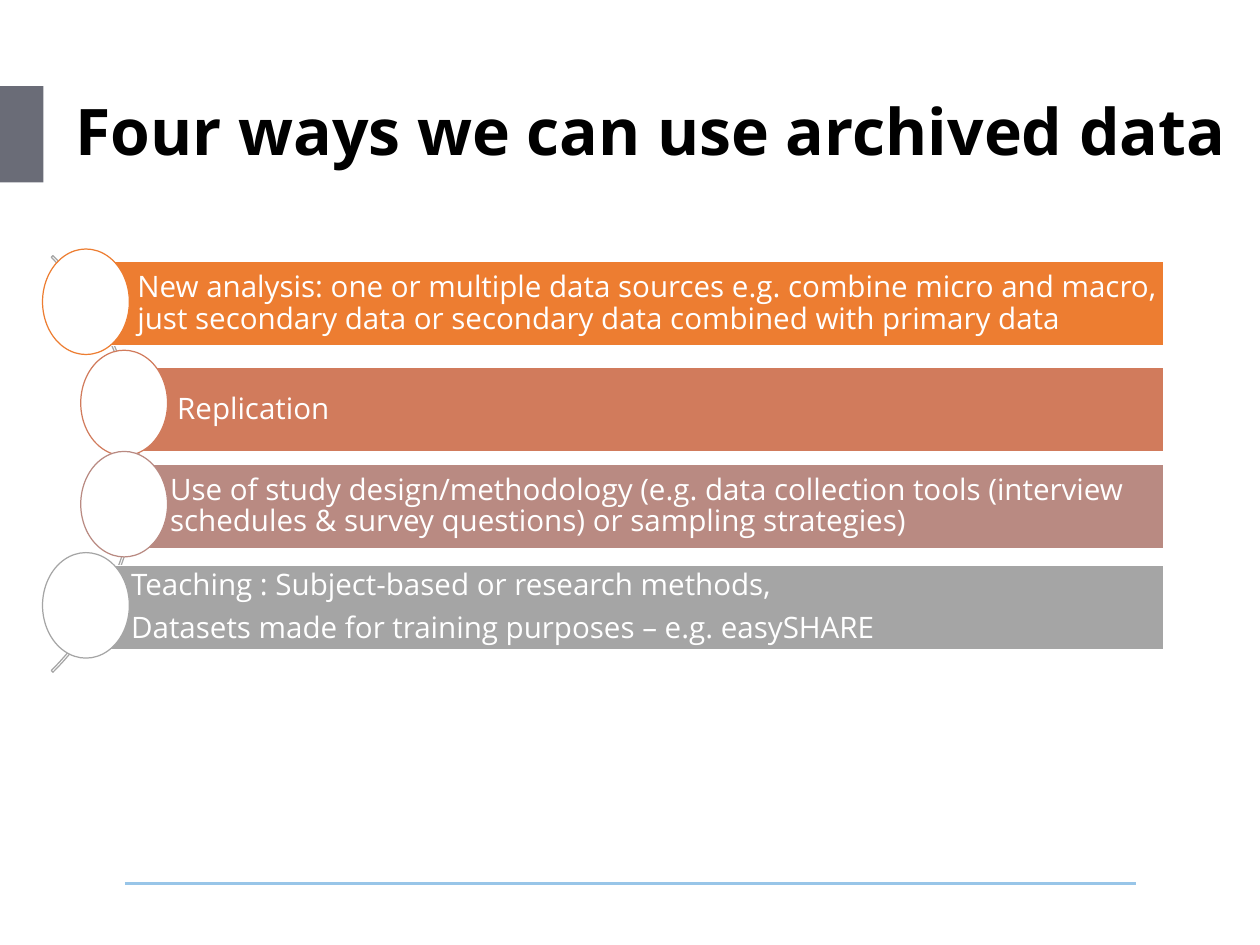
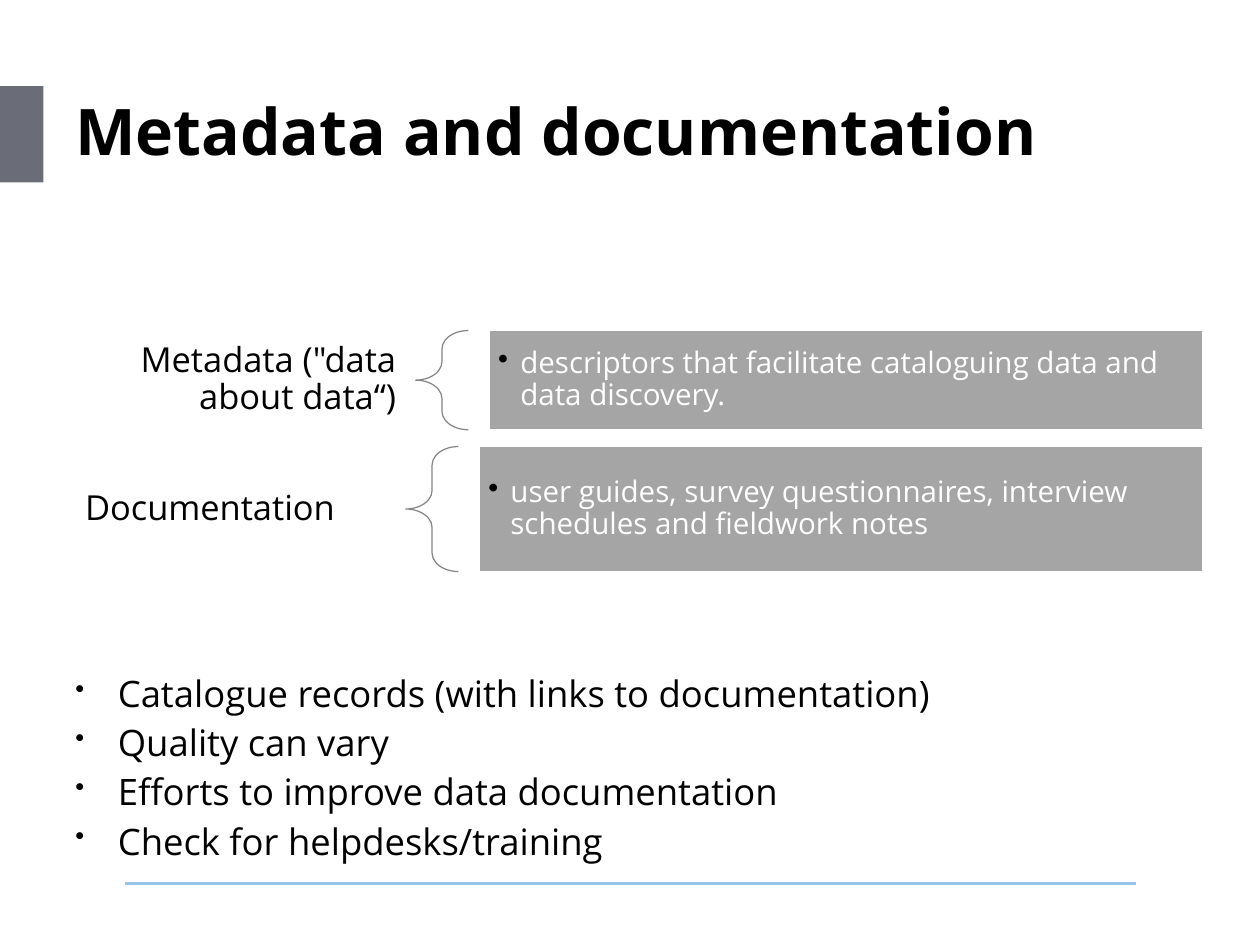
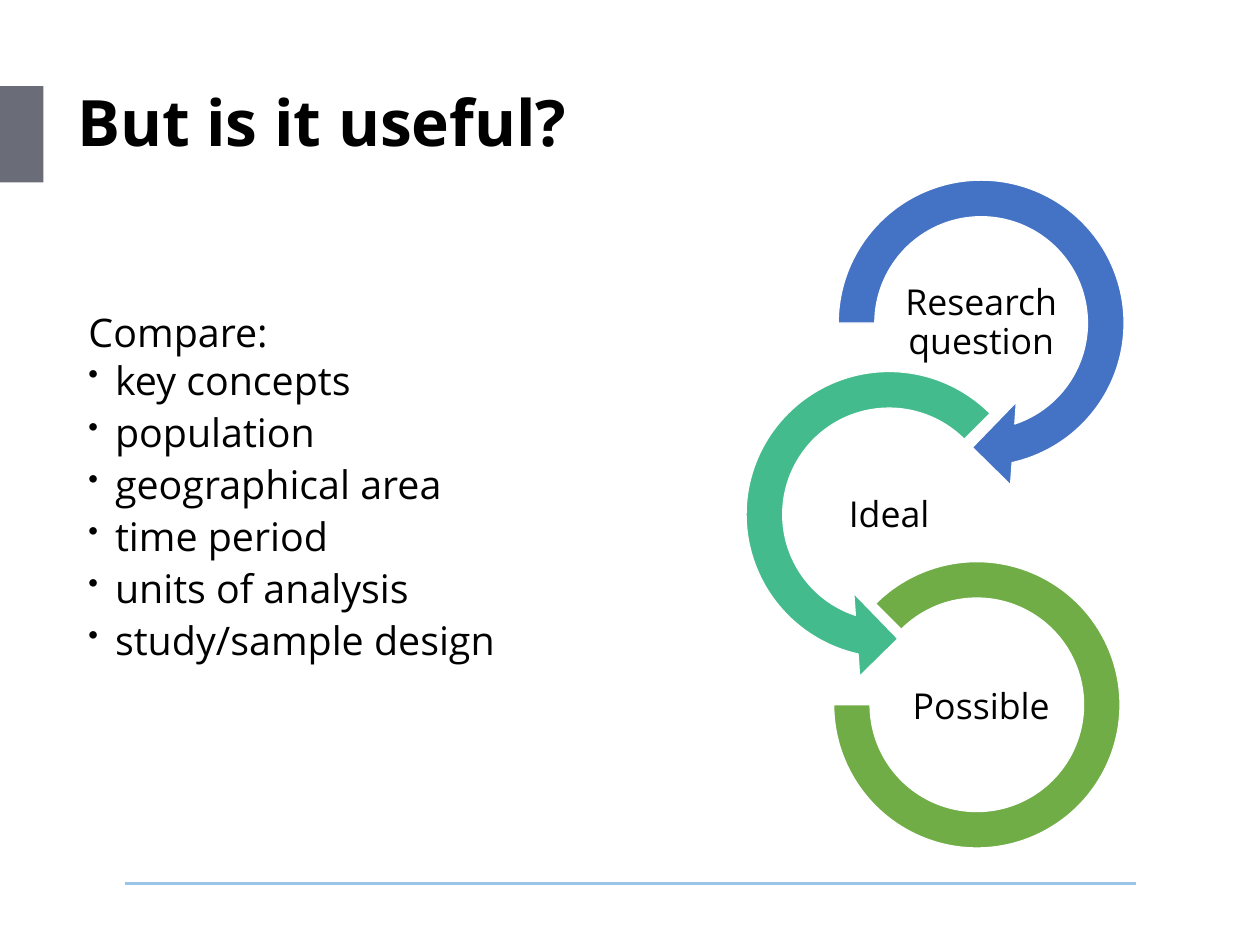
"""Builds three slides about reusing archived data on a 64 by 48 grid."""
from dataclasses import dataclass
from typing import Any, NamedTuple

from lxml import etree
from pptx import Presentation
from pptx.dml.color import RGBColor
from pptx.enum.shapes import MSO_CONNECTOR, MSO_SHAPE
from pptx.enum.text import MSO_ANCHOR, PP_ALIGN
from pptx.oxml.ns import qn
from pptx.util import Emu, Inches, Pt

RECT, OVAL, ARC = MSO_SHAPE.RECTANGLE, MSO_SHAPE.OVAL, MSO_SHAPE.BLOCK_ARC
BRACE, TURN = MSO_SHAPE.LEFT_BRACE, MSO_SHAPE.CIRCULAR_ARROW
BACK = MSO_SHAPE.LEFT_CIRCULAR_ARROW
LINE = MSO_CONNECTOR.STRAIGHT
TOP, MID = MSO_ANCHOR.TOP, MSO_ANCHOR.MIDDLE
LEFT, RIGHT, CENTER = PP_ALIGN.LEFT, PP_ALIGN.RIGHT, PP_ALIGN.CENTER

WIDE, HIGH = Inches(14.22), Inches(10.67)
COLS, ROWS = 64, 48


@dataclass(frozen=True)
class Theme:
    """Colours and type sizes of the deck."""
    face: str = "Open Sans"
    ink: str = "000000"
    paper: str = "FFFFFF"
    band: str = "6A6C77"
    rule: str = "98C5E8"
    gray: str = "A5A5A5"
    brace: str = "848484"
    orange: str = "ED7D31"
    rust: str = "D17B5C"
    rose: str = "B98A82"
    blue: str = "4472C4"
    teal: str = "43BB8D"
    green: str = "70AD47"
    title: float = 52.2
    list: float = 29.6
    lead: float = 32
    ring: float = 29
    label: float = 28
    text: float = 24


T = Theme()


class Box(NamedTuple):
    """Place and size in grid cells."""
    x: float
    y: float
    w: float
    h: float


class Style(NamedTuple):
    """Look of a paragraph; after is a share of the type size."""
    size: float
    color: str = T.ink
    bold: bool = False
    align: Any = LEFT
    lines: float = 0.9
    before: float = 0
    after: float = 0
    dent: float = 0
    dot: int = 100


class Bar(NamedTuple):
    """A coloured bar and its disc."""
    x: float
    y: float
    disc: float
    color: str
    lines: list[str]


class Pair(NamedTuple):
    """A term, its brace and its meaning."""
    y: float
    h: float
    mid: float
    pad: float
    term: str
    text: str


class Ring(NamedTuple):
    """A round arrow with a label inside."""
    kind: Any
    x: float
    y: float
    side: float
    adj: list[float]
    color: str
    left: float
    text: str


HEAD = Style(T.title, bold=True)
BARTEXT = Style(T.text, T.paper, after=0.35)
TERM = Style(T.label, align=RIGHT, after=0.35)
NOTE = Style(T.text, T.paper, after=0.15, dent=0.25)
RINGTEXT = Style(T.ring, align=CENTER, after=0.35)
POINT = Style(T.list, lines=0.7, before=10.7, after=0.15, dent=0.48, dot=73)
ITEM = POINT._replace(size=T.lead, dent=0.3)
LEAD = Style(T.lead, lines=1.0)
PAD = (0.1, 0.05, 0.1, 0.05)

BARS = [
    Bar(4.28, 13.28, 2.16, T.orange, [
        "New analysis: one or multiple data sources e.g. combine micro and macro, "
        "just secondary data or secondary data combined with primary data"]),
    Bar(6.3, 18.68, 4.1, T.rust, ["Replication"]),
    Bar(5.94, 23.58, 4.1, T.rose, [
        "Use of study design/methodology (e.g. data collection tools (interview "
        "schedules & survey questions) or sampling strategies)"]),
    Bar(3.96, 28.71, 2.16, T.gray, [
        "Teaching : Subject-based or research methods,",
        "Datasets made for training purposes – e.g. easySHARE"]),
]
PAIRS = [
    Pair(16.79, 5.04, 21.11, 0.22, 'Metadata ("data about data“)',
         "descriptors that facilitate cataloguing data and data discovery."),
    Pair(22.68, 6.35, 20.61, 0.8, "Documentation",
         "user guides, survey questionnaires, interview schedules and fieldwork notes"),
]
RINGS = [
    Ring(TURN, 41.4, 7.97, 16.88, [0.11, 11.42, 45, 108, 0.125], T.blue,
         45.14, "Research question"),
    Ring(BACK, 36.72, 17.69, 16.88, [0.11, 11.42, 63, 189, 0.125], T.teal,
         40.46, "Ideal"),
    Ring(ARC, 42.35, 28.53, 14.54, [135, 108, 0.127], T.green,
         45.14, "Possible"),
]
POINTS = ["Catalogue records (with links to documentation)", "Quality can vary",
          "Efforts to improve data documentation", "Check for helpdesks/training"]
ITEMS = ["key concepts", "population", "geographical area", "time period",
         "units of analysis", "study/sample design"]


def col(n: float) -> Emu:
    """Turn grid columns into a length."""
    return Emu(round(WIDE * n / COLS))


def row(n: float) -> Emu:
    """Turn grid rows into a length."""
    return Emu(round(HIGH * n / ROWS))


def span(box: Box) -> tuple[Emu, Emu, Emu, Emu]:
    """Turn a grid box into lengths."""
    return col(box.x), row(box.y), col(box.w), row(box.h)


def put(item: Any, vals: dict[str, Any]) -> None:
    """Set each named attribute."""
    for key, val in vals.items():
        setattr(item, key, val)


def bullet(para: Any, style: Style) -> None:
    """Give a paragraph a hanging dot."""
    props = para._p.get_or_add_pPr()
    dent = Inches(style.dent)
    props.set("marL", str(dent))
    props.set("indent", str(-dent))
    tint = etree.SubElement(props, qn("a:buClr"))
    etree.SubElement(tint, qn("a:srgbClr")).set("val", T.ink)
    etree.SubElement(props, qn("a:buSzPct")).set("val", str(style.dot * 1000))
    etree.SubElement(props, qn("a:buChar")).set("char", "•")


def write(shape: Any, rows: list[tuple[str, Style]], anchor: Any = MID,
          pad: tuple[float, ...] = PAD) -> None:
    """Fill a shape with styled paragraphs."""
    frame = shape.text_frame
    sides = ("margin_left", "margin_top", "margin_right", "margin_bottom")
    put(frame, {"word_wrap": True, "vertical_anchor": anchor,
                **dict(zip(sides, map(Inches, pad)))})
    for n, (text, style) in enumerate(rows):
        para = frame.add_paragraph() if n else frame.paragraphs[0]
        if style.dent:
            bullet(para, style)
        put(para, {"alignment": style.align, "line_spacing": style.lines,
                   "space_before": Pt(style.before if n else 0),
                   "space_after": Pt(style.size * style.after)})
        run = para.add_run()
        run.text = text
        put(run.font, {"name": T.face, "size": Pt(style.size), "bold": style.bold})
        run.font.color.rgb = RGBColor.from_string(style.color)


def label(slide: Any, box: Box, rows: list[tuple[str, Style]], anchor: Any = MID,
          pad: tuple[float, ...] = PAD) -> None:
    """Add a text box."""
    write(slide.shapes.add_textbox(*span(box)), rows, anchor, pad)


def draw(slide: Any, kind: Any, box: Box, fill: str = "", line: str = "",
         adj: list[float] | None = None) -> Any:
    """Add a preset shape with flat colours."""
    shape = slide.shapes.add_shape(kind, *span(box))
    shape.shadow.inherit = False
    for n, val in enumerate(adj or []):
        shape.adjustments[n] = val
    for part, color in ((shape.fill, fill), (shape.line.fill, line)):
        if color:
            part.solid()
            part.fore_color.rgb = RGBColor.from_string(color)
        else:
            part.background()
    if line:
        shape.line.width = Pt(1)
    return shape


def start(deck: Any, title: str, style: Style = HEAD, anchor: Any = MID,
          pad: tuple[float, ...] = PAD) -> Any:
    """Add a slide with band, rule and title."""
    slide = deck.slides.add_slide(deck.slide_layouts[6])
    draw(slide, RECT, Box(0, 4.37, 2.2, 4.9), T.band)
    rule = slide.shapes.add_connector(LINE, col(6.35), row(44.87), col(57.69), row(44.87))
    rule.line.color.rgb = RGBColor.from_string(T.rule)
    rule.line.width = Pt(2)
    etree.SubElement(rule._element.spPr, qn("a:effectLst"))
    label(slide, Box(3.38, 4.37, 60.6, 4.9), [(title, style)], anchor, pad)
    return slide


def ways(deck: Any) -> None:
    """Build the slide of four bars."""
    slide = start(deck, "Four ways we can use archived data")
    draw(slide, ARC, Box(-22.86, 8.6, 29.93, 29.93), line=T.gray, adj=[189, 27, 0.004])
    for n, bar in enumerate(BARS):
        shape = draw(slide, RECT, Box(bar.x, bar.y, 59.13 - bar.x, 4.28), bar.color, T.paper)
        write(shape, [(text, BARTEXT) for text in bar.lines], pad=(0.6, 0.05, 0.05, 0.05))
        draw(slide, OVAL, Box(bar.disc, 12.65 + 5.14 * n, 4.41, 5.36), T.paper, bar.color)


def terms(deck: Any) -> None:
    """Build the slide of terms and points."""
    slide = start(deck, "Metadata and documentation")
    for pair in PAIRS:
        label(slide, Box(3.38, pair.y, pair.mid - 3.38, pair.h), [(pair.term, TERM)],
              pad=(0.1, 0.08, pair.pad, 0.08))
        draw(slide, BRACE, Box(pair.mid, pair.y, 2.68, pair.h), line=T.brace, adj=[0.35, 0.5])
        left = pair.mid + 3.75
        shape = draw(slide, RECT, Box(left, pair.y, 61.11 - left, pair.h), T.gray, T.paper)
        write(shape, [(pair.text, NOTE)], pad=(0.1,) * 4)
    label(slide, Box(3.38, 34.47, 54.3, 10.53), [(text, POINT) for text in POINTS], TOP)


def useful(deck: Any) -> None:
    """Build the slide of round arrows."""
    slide = start(deck, "But is it useful?", HEAD._replace(size=52), TOP,
                  (0.12, 0.06, 0.12, 0.06))
    for n, ring in enumerate(RINGS):
        draw(slide, ring.kind, Box(ring.x, ring.y, ring.side, ring.side),
             ring.color, T.paper, ring.adj)
        label(slide, Box(ring.left, 14.09 + 9.76 * n, 9.41, 4.68),
              [(ring.text, RINGTEXT)], pad=(0.02,) * 4)
    rows = [("Compare:", LEAD)] + [(text, ITEM) for text in ITEMS]
    label(slide, Box(4.05, 15.44, 25.1, 21.83), rows, TOP)


def main() -> None:
    """Build and save the deck."""
    deck = Presentation()
    put(deck, {"slide_width": WIDE, "slide_height": HIGH})
    for build in (ways, terms, useful):
        build(deck)
    deck.save("out.pptx")


if __name__ == "__main__":
    main()
